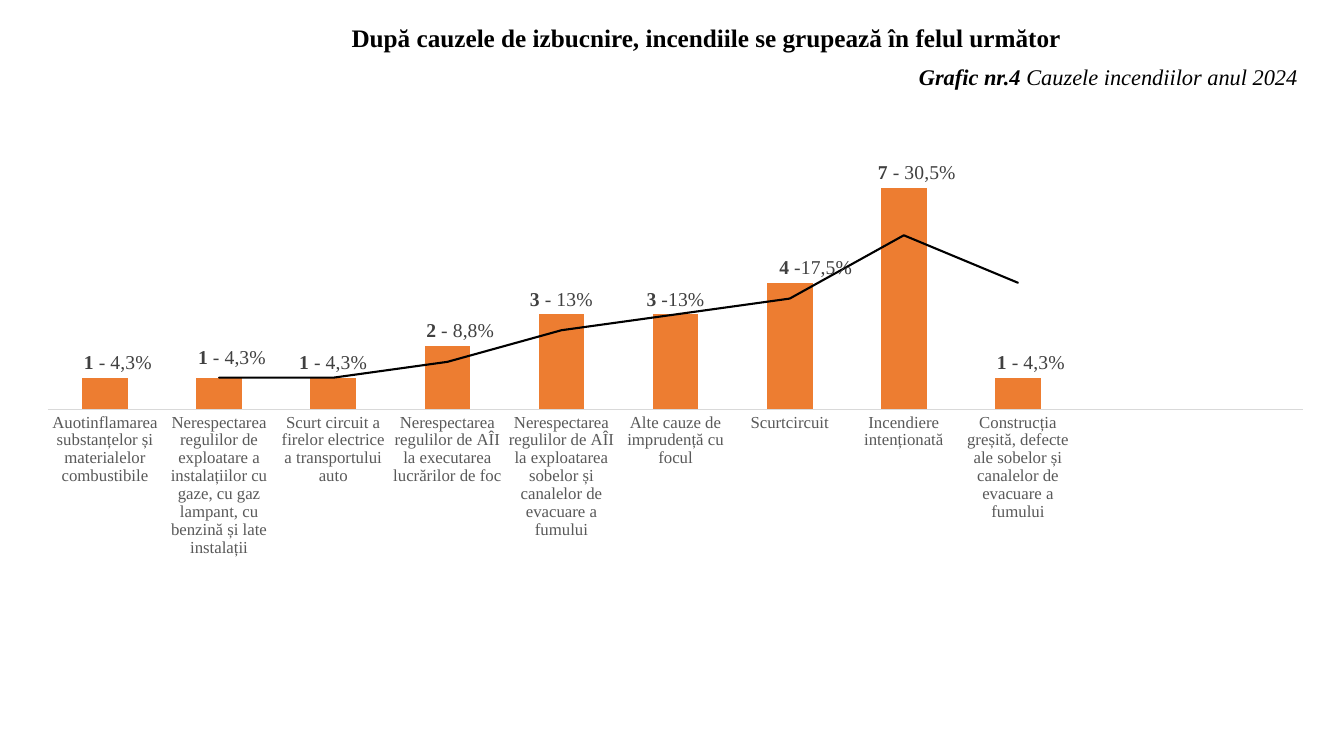
"""Build the slide on causes of fires in 2024."""
from lxml import etree
from pptx import Presentation, util as u
from pptx.chart import data as chart_data
from pptx.dml import color
from pptx.enum import chart as kinds, text
from pptx.oxml import ns

WIDTH, HEIGHT = 13.33, 7.5
FONT = "Times New Roman"
HEADINGS = [
    {"at": (2.13, 0.17, 9.75, 0.4), "align": text.PP_ALIGN.CENTER, "right": 0.1,
     "spans": [("După cauzele de izbucnire, incendiile se grupează în felul următor",
                {"size": 18, "bold": True})]},
    {"at": (8.46, 0.58, 4.71, 0.37), "align": text.PP_ALIGN.RIGHT, "right": 0.3,
     "spans": [("Grafic nr.4 ", {"size": 16, "bold": True, "italic": True}),
               ("Cauzele incendiilor anul 2024", {"size": 16, "bold": False, "italic": True})]},
]
CHART_AT = (0.19, 0.98, 12.97, 5.18)
PLOT = {"x": 0.022, "y": 0.11, "w": 0.96, "h": 0.485}
CAUSES = [
    ("Auotinflamarea substanțelor și materialelor combustibile", 1, " - 4,3%", (0.01, 0)),
    ("Nerespectarea regulilor de exploatare a instalațiilor cu gaze, cu gaz lampant, "
     "cu benzină și late instalații", 1, " - 4,3%", (0.01, -0.01)),
    ("Scurt circuit a firelor electrice a transportului auto", 1, " - 4,3%", (0, 0)),
    ("Nerespectarea regulilor de AÎI la executarea lucrărilor de foc", 2, " - 8,8%", (0.01, 0)),
    ("Nerespectarea regulilor de AÎI la exploatarea sobelor și canalelor de evacuare a fumului",
     3, " - 13%", (0, 0)),
    ("Alte cauze de imprudență cu focul", 3, " -13%", (0, 0)),
    ("Scurtcircuit", 4, " -17,5%", (0.02, 0)),
    ("Incendiere intenționată", 7, " - 30,5%", (0.01, 0)),
    ("Construcția greșită, defecte ale sobelor și canalelor de evacuare a fumului",
     1, " - 4,3%", (0.01, 0)),
    ("", None, "", (0, 0)),
    ("", None, "", (0, 0)),
]
TREND = (
    f'<c:trendline {ns.nsdecls("c", "a")}><c:spPr><a:ln w="19050" cap="rnd"><a:solidFill>'
    '<a:srgbClr val="000000"/></a:solidFill><a:prstDash val="solid"/></a:ln></c:spPr>'
    '<c:trendlineType val="movingAvg"/><c:period val="2"/>'
    '<c:dispRSqr val="0"/><c:dispEq val="0"/></c:trendline>'
)


def rgb(value):
    """Turn a hex string into a colour."""
    return color.RGBColor.from_string(value)


def assign(target, values):
    """Set each named attribute on the target."""
    for name, value in values.items():
        setattr(target, name, value)


def style(font, tint, size, **values):
    """Give a font its family, colour, size and emphasis."""
    assign(font, {"name": FONT, "size": u.Pt(size), **values})
    font.color.rgb = rgb(tint)


def layout(values, target=None):
    """Make a manual chart layout element."""
    lines = f'<c:layoutTarget val="{target}"/>' if target else ""
    if target:
        lines += '<c:xMode val="edge"/><c:yMode val="edge"/>'
    lines += "".join(f'<c:{key} val="{value}"/>' for key, value in values.items())
    return etree.fromstring(
        f'<c:layout {ns.nsdecls("c")}><c:manualLayout>{lines}</c:manualLayout></c:layout>')


def add_heading(page, heading):
    """Add one line of mixed text."""
    box = page.shapes.add_textbox(*map(u.Inches, heading["at"]))
    assign(box.text_frame, {"word_wrap": True, "margin_right": u.Inches(heading["right"])})
    para = box.text_frame.paragraphs[0]
    para.alignment = heading["align"]
    for words, look in heading["spans"]:
        span = para.add_run()
        span.text = words
        style(span.font, "000000", **look)


def add_label(series, index, count, share, shift):
    """Label one column with its count and share."""
    label = series.points[index].data_label
    para = label.text_frame.paragraphs[0]
    for words, bold in ((str(count), True), (share, False)):
        span = para.add_run()
        span.text = words
        style(span.font, "404040", 14, bold=bold)
    label.position = kinds.XL_LABEL_POSITION.OUTSIDE_END
    if any(shift):
        element = series._element.xpath(f'c:dLbls/c:dLbl/c:idx[@val="{index}"]')[0]
        element.addnext(layout(dict(zip("xy", shift))))


def add_causes_chart(page):
    """Add the column chart with its moving average."""
    content = chart_data.CategoryChartData()
    content.categories = [cause[0] for cause in CAUSES]
    content.add_series("Series 1", [cause[1] for cause in CAUSES])
    chart = page.shapes.add_chart(
        kinds.XL_CHART_TYPE.COLUMN_CLUSTERED, *map(u.Inches, CHART_AT), content).chart
    assign(chart, {"has_legend": False, "has_title": False})
    style(chart.font, "000000", 14)

    axis = chart.category_axis
    assign(axis, {"major_tick_mark": kinds.XL_TICK_MARK.NONE, "has_major_gridlines": False})
    style(axis.tick_labels.font, "595959", 12)
    axis.format.line.color.rgb = rgb("D9D9D9")
    axis.format.line.width = u.Pt(0.75)
    assign(chart.value_axis, {"visible": False, "has_major_gridlines": False,
                              "minimum_scale": 0, "maximum_scale": 8})

    plot = chart.plots[0]
    assign(plot, {"gap_width": 150, "overlap": -25, "vary_by_categories": False})
    series = plot.series[0]
    series.format.fill.solid()
    series.format.fill.fore_color.rgb = rgb("ED7D31")
    series.data_labels.show_value = True
    style(series.data_labels.font, "404040", 14)
    for index, (_, count, share, shift) in enumerate(CAUSES):
        if count is not None:
            add_label(series, index, count, share, shift)
    series._element.find(ns.qn("c:cat")).addprevious(etree.fromstring(TREND))

    area = chart._chartSpace.chart.plotArea
    for old in area.findall(ns.qn("c:layout")):
        area.remove(old)
    area.insert(0, layout(PLOT, "inner"))


def main():
    """Build and save the deck."""
    deck = Presentation()
    assign(deck, {"slide_width": u.Inches(WIDTH), "slide_height": u.Inches(HEIGHT)})
    page = deck.slides.add_slide(deck.slide_layouts[6])
    for heading in HEADINGS:
        add_heading(page, heading)
    add_causes_chart(page)
    deck.save("out.pptx")


if __name__ == "__main__":
    main()
